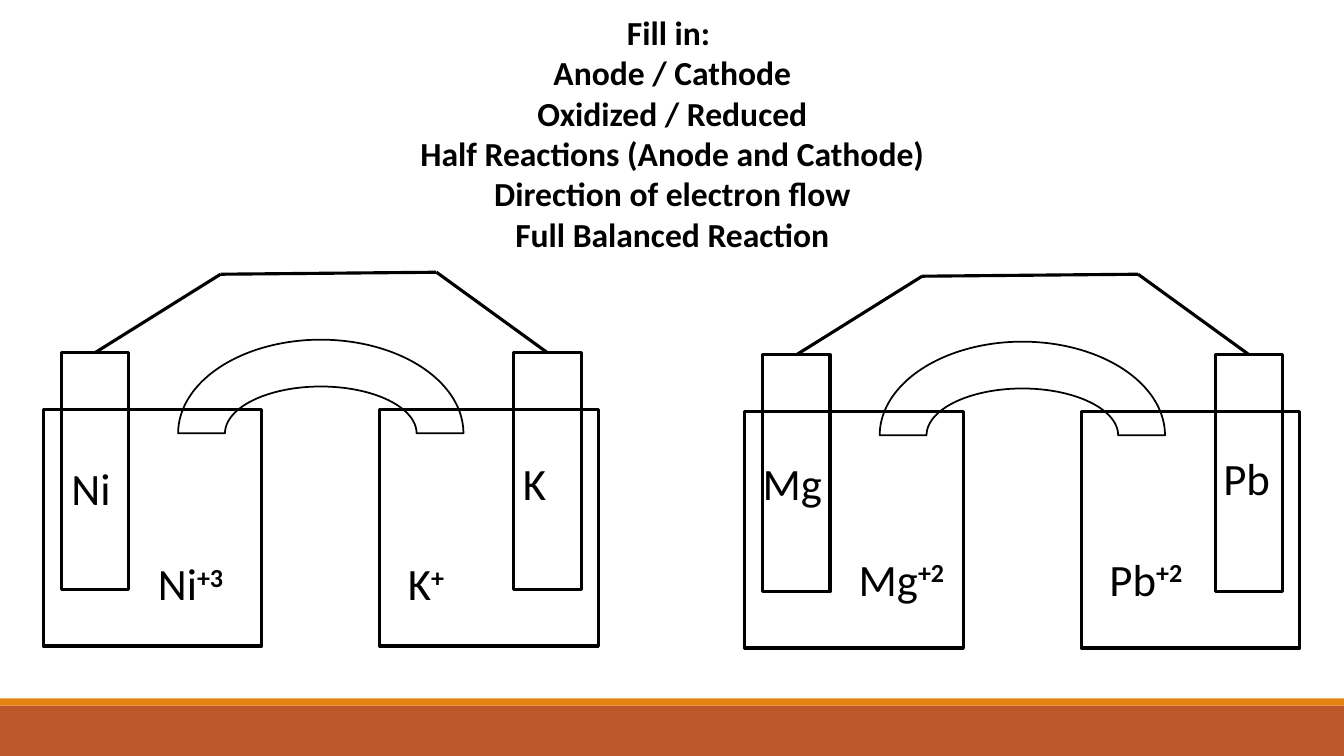
from lxml import etree
from pptx import Presentation
from pptx.dml.color import RGBColor
from pptx.enum.shapes import MSO_CONNECTOR as Connector, MSO_SHAPE as Shape
from pptx.enum.text import MSO_AUTO_SIZE as AutoSize, PP_ALIGN as Align
from pptx.oxml.ns import qn
from pptx.util import Cm, Pt

BLACK = RGBColor(0x00, 0x00, 0x00)
RUST = RGBColor(0xBD, 0x58, 0x2C)
ORANGE = RGBColor(0xE4, 0x83, 0x12)
FONT = "Calibri"

SLIDE_WIDTH, SLIDE_HEIGHT = 33.87, 19.05
BEAKER_SIZE = (5.51, 5.97)
ELECTRODE_SIZE = (1.70, 5.97)
BRIDGE_SIZE = (7.19, 4.72)
LABEL_HEIGHT = 1.63

INSTRUCTIONS = [
    "Fill in: ",
    "Anode / Cathode",
    "Oxidized / Reduced",
    "Half Reactions (Anode and Cathode)",
    "Direction of electron flow",
    "Full Balanced Reaction",
]

# Left and top corner of each galvanic cell
CELLS = [(18.77, 6.91), (1.09, 6.86)]

# Element, ion charge, left, top, width
LABELS = [
    ("Ni", "", 1.55, 11.48, 1.70),
    ("Ni", "+3", 3.73, 13.89, 2.49),
    ("K", "", 12.93, 11.35, 1.70),
    ("K", "+", 10.03, 13.89, 2.49),
    ("Mg", "", 18.97, 11.35, 2.16),
    ("Mg", "+2", 21.39, 13.77, 2.90),
    ("Pb", "", 30.58, 11.23, 1.70),
    ("Pb", "+2", 27.71, 13.77, 2.49),
]


def add_bar(slide, top, height, color):
    bar = slide.shapes.add_shape(
        Shape.RECTANGLE, 0, Cm(top), Cm(SLIDE_WIDTH), Cm(height))
    bar.shadow.inherit = False
    bar.fill.solid()
    bar.fill.fore_color.rgb = color
    bar.line.fill.background()


def add_outline(slide, kind, left, top, size, weight=2.25):
    shape = slide.shapes.add_shape(
        kind, Cm(left), Cm(top), Cm(size[0]), Cm(size[1]))
    shape.shadow.inherit = False
    shape.fill.background()
    shape.line.color.rgb = BLACK
    shape.line.width = Pt(weight)
    return shape


def add_wire(slide, start, end, electrode=None):
    """Draw a wire, joined at its start to the electrode's top if given."""
    wire = slide.shapes.add_connector(
        Connector.STRAIGHT, *(Cm(length) for length in (*start, *end)))
    wire.line.color.rgb = BLACK
    wire.line.width = Pt(2.25)
    properties = wire.element.find(qn("p:spPr"))
    etree.SubElement(properties, qn("a:effectLst"))
    if electrode is not None:
        wire.begin_connect(electrode, 0)


def add_text_box(slide, left, top, width, height):
    box = slide.shapes.add_textbox(Cm(left), Cm(top), Cm(width), Cm(height))
    box.text_frame.word_wrap = True
    box.text_frame.auto_size = AutoSize.SHAPE_TO_FIT_TEXT
    return box.text_frame


def add_run(paragraph, text, size, bold=False):
    run = paragraph.add_run()
    run.text = text
    run.font.name = FONT
    run.font.size = Pt(size)
    run.font.bold = bold
    run.font.color.rgb = BLACK
    return run


def add_instructions(slide):
    frame = add_text_box(slide, 10.11, 0.18, 13.67, 6.40)
    for index, line in enumerate(INSTRUCTIONS):
        paragraph = frame.add_paragraph() if index else frame.paragraphs[0]
        paragraph.alignment = Align.CENTER
        add_run(paragraph, line, 24, bold=True)


def add_label(slide, element, charge, left, top, width):
    frame = add_text_box(slide, left, top, width, LABEL_HEIGHT)
    paragraph = frame.paragraphs[0]
    add_run(paragraph, element, 32)
    if charge:
        run = add_run(paragraph, charge, 32, bold=True)
        run.font._element.set("baseline", "30000")


def add_cell(slide, left, top):
    """Draw two beakers with electrodes, a salt bridge and the outer wire."""
    for offset in (0, 8.48):
        add_outline(slide, Shape.RECTANGLE, left + offset, top + 3.45, BEAKER_SIZE)
    add_outline(slide, Shape.BLOCK_ARC, left + 3.40, top + 1.70, BRIDGE_SIZE, 1.25)

    corners = [(left + 4.47, top + 0.05), (left + 9.91, top)]
    for offset, corner in zip((0.45, 11.86), corners):
        electrode_left, electrode_top = left + offset, top + 2.03
        electrode = add_outline(
            slide, Shape.RECTANGLE, electrode_left, electrode_top, ELECTRODE_SIZE)
        top_middle = (electrode_left + ELECTRODE_SIZE[0] / 2, electrode_top)
        add_wire(slide, top_middle, corner, electrode)
    add_wire(slide, corners[1], corners[0])


def main():
    presentation = Presentation()
    presentation.slide_width = Cm(SLIDE_WIDTH)
    presentation.slide_height = Cm(SLIDE_HEIGHT)
    slide = presentation.slides.add_slide(presentation.slide_layouts[6])

    add_bar(slide, 17.78, 1.27, RUST)
    add_bar(slide, 17.60, 0.18, ORANGE)
    add_instructions(slide)
    for left, top in CELLS:
        add_cell(slide, left, top)
    for label in LABELS:
        add_label(slide, *label)

    presentation.save("out.pptx")


if __name__ == "__main__":
    main()
